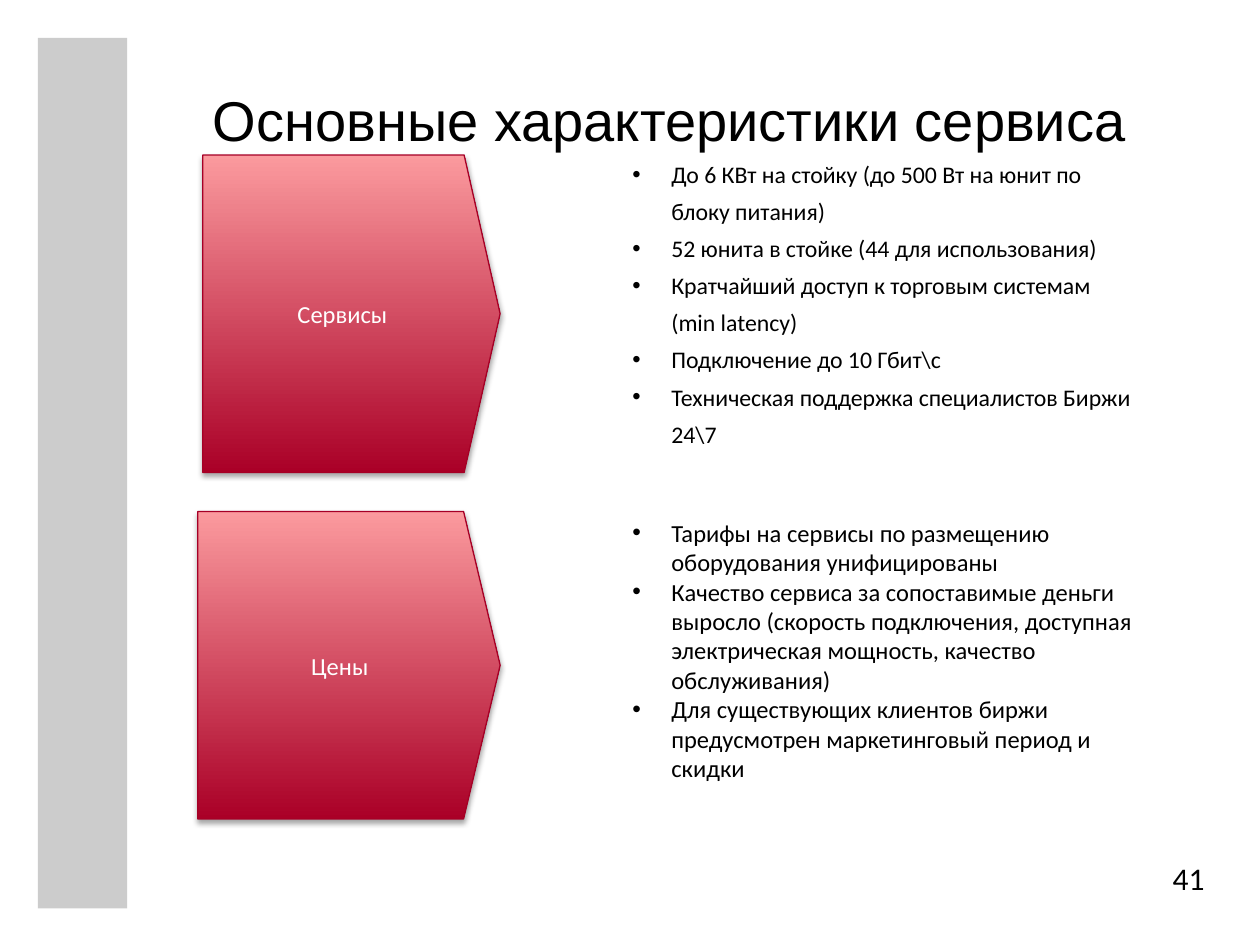
from lxml import etree
from pptx import Presentation
from pptx.dml.color import RGBColor
from pptx.enum import shapes, text
from pptx.oxml import ns
from pptx.util import Inches, Pt


def rgb(value):
    return RGBColor.from_string(value)


def add_run(paragraph, words, size, color="000000", font="Calibri"):
    run = paragraph.add_run()
    run.text = words
    run.font.size = Pt(size)
    run.font.name = font
    run.font.color.rgb = rgb(color)


deck = Presentation()
deck.slide_width, deck.slide_height = Inches(10), Inches(7.5)
slide = deck.slides.add_slide(deck.slide_layouts[6])

side_band = slide.shapes.add_shape(
    shapes.MSO_SHAPE.RECTANGLE, Inches(0.3), Inches(0.3), Inches(0.71), Inches(6.91))
side_band.shadow.inherit = False
side_band.fill.solid()
side_band.fill.fore_color.rgb = rgb("CCCCCC")
side_band.line.fill.background()

title = slide.shapes.add_textbox(Inches(1.26), Inches(0.63), Inches(8.11), Inches(1.23)).text_frame
title.word_wrap = True
title.paragraphs[0].alignment = text.PP_ALIGN.CENTER
add_run(title.paragraphs[0], "Основные характеристики сервиса", 32, font="Arial")

page_number = slide.shapes.add_textbox(
    Inches(9.17), Inches(6.77), Inches(0.39), Inches(0.39)).text_frame
page_number.word_wrap = True
page_number.margin_right = page_number.margin_bottom = 0
page_number.paragraphs[0].alignment = text.PP_ALIGN.RIGHT
add_run(page_number.paragraphs[0], "41", 18)

# Heading, arrow box, list top and height, text size, line spacing, points
topics = [
    ("Сервисы", (1.61, 1.23, 2.36, 2.52), 1.15, 2.68, 13.6, 1.3, [
        "До 6 КВт на стойку (до 500 Вт на юнит по блоку питания)",
        "52 юнита в стойке (44 для использования)",
        "Кратчайший доступ к торговым системам (min latency)",
        "Подключение до 10 Гбит\\с",
        "Техническая поддержка специалистов Биржи 24\\7",
    ]),
    ("Цены", (1.57, 4.06, 2.4, 2.44), 4.06, 2.22, 14, 1.0, [
        "Тарифы на сервисы по размещению оборудования унифицированы",
        "Качество сервиса за сопоставимые деньги выросло (скорость подключения, "
        "доступная электрическая мощность, качество обслуживания)",
        "Для существующих клиентов биржи предусмотрен маркетинговый период и скидки",
    ]),
]

for heading, arrow_box, list_top, list_height, size, spacing, points in topics:
    arrow = slide.shapes.add_shape(shapes.MSO_SHAPE.PENTAGON, *map(Inches, arrow_box))
    arrow.adjustments[0] = 0.121
    arrow.fill.gradient()
    arrow.fill.gradient_angle = 90
    for stop, color in zip(arrow.fill.gradient_stops, ("AA0027", "FB9A9E")):
        stop.color.rgb = rgb(color)
    arrow.line.color.rgb = rgb("A60026")
    arrow.line.width = Pt(0.75)

    arrow.shadow.inherit = False
    effects = arrow.element.spPr.find(ns.qn("a:effectLst"))
    shadow = etree.SubElement(
        effects, ns.qn("a:outerShdw"), blurRad=str(Pt(3.1)), dist=str(Pt(1.8)),
        dir="5400000", rotWithShape="0")
    shadow_color = etree.SubElement(shadow, ns.qn("a:srgbClr"), val="000000")
    etree.SubElement(shadow_color, ns.qn("a:alpha"), val="35000")

    label = arrow.text_frame
    label.vertical_anchor = text.MSO_ANCHOR.MIDDLE
    label.paragraphs[0].alignment = text.PP_ALIGN.CENTER
    add_run(label.paragraphs[0], heading, 14, "FFFFFF")

    details = slide.shapes.add_textbox(
        Inches(4.92), Inches(list_top), Inches(4.17), Inches(list_height)).text_frame
    details.word_wrap = True
    for index, point in enumerate(points):
        paragraph = details.add_paragraph() if index else details.paragraphs[0]
        paragraph.line_spacing = spacing
        properties = paragraph._p.get_or_add_pPr()
        properties.set("marL", str(Inches(0.31)))
        properties.set("indent", str(-Inches(0.31)))
        etree.SubElement(properties, ns.qn("a:buFont"), typeface="Arial")
        etree.SubElement(properties, ns.qn("a:buChar"), char="•")
        add_run(paragraph, point, size)

deck.save("out.pptx")
